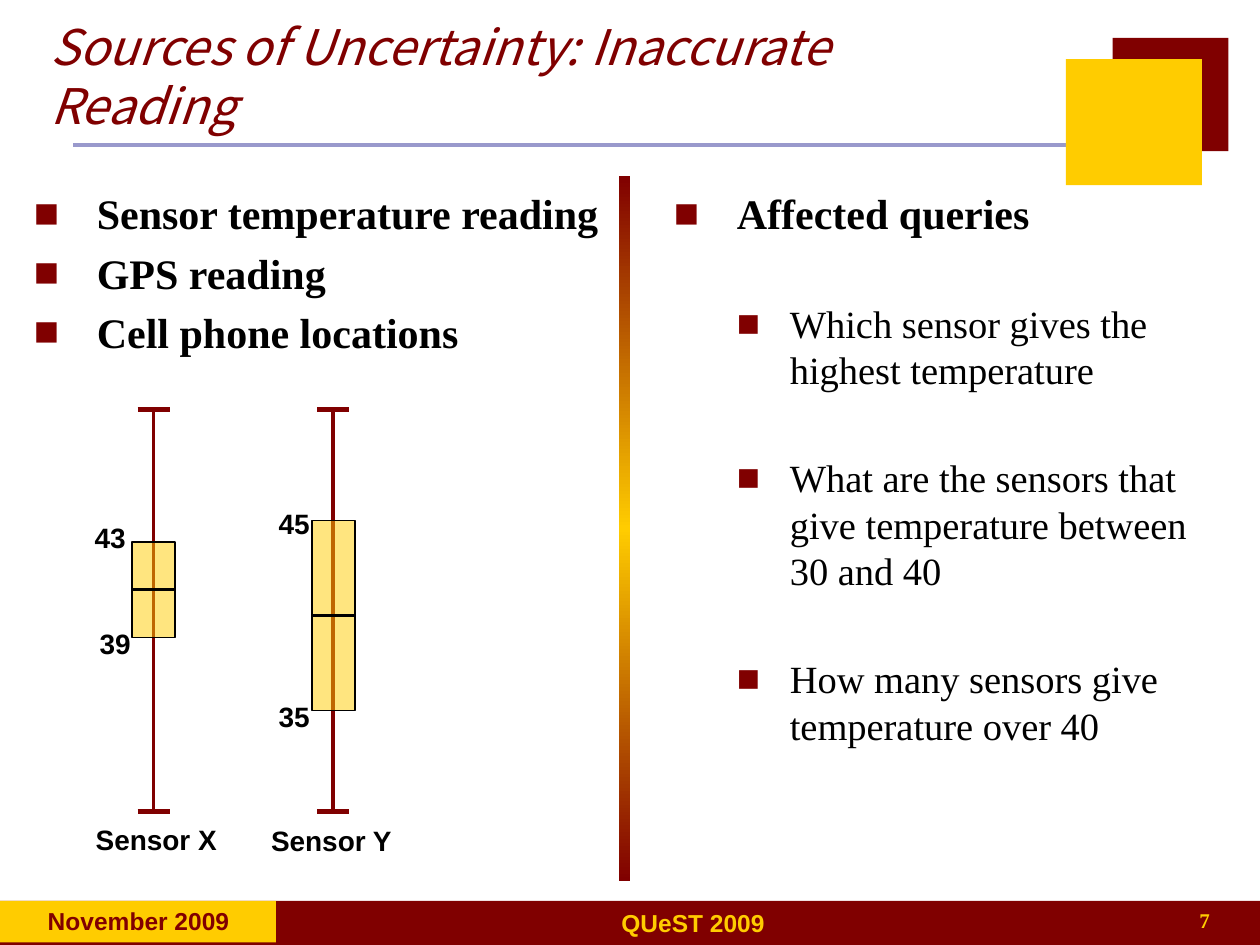
import pptx
import pptx.dml.color
import pptx.enum.shapes
import pptx.enum.text
import pptx.oxml
import pptx.oxml.ns
import pptx.util

MAROON, GOLD, BLACK, LAVENDER = "800000", "FFCC00", "000000", "9999CC"
SANS, SERIF, TITLE_FONT = "Arial", "Times New Roman", "Noto Sans CJK KR"
COLUMNS, ROWS = 100, 75
ALIGN = pptx.enum.text.PP_ALIGN


def color(hex_string):
    return pptx.dml.color.RGBColor.from_string(hex_string)


def add_xml(parent, tag, **attributes):
    element = pptx.oxml.parse_xml(f"<a:{tag} {pptx.oxml.ns.nsdecls('a')}/>")
    for name, value in attributes.items():
        element.set(name, str(value))
    parent.append(element)
    return element


class SlideBuilder:
    """Draws on one slide; lengths are columns and rows of a 100 by 75 grid."""

    def __init__(self, presentation):
        self.column = presentation.slide_width / COLUMNS
        self.row = presentation.slide_height / ROWS
        self.slide = presentation.slides.add_slide(presentation.slide_layouts[6])
        self.shapes = self.slide.shapes

    def place(self, left, top, width, height):
        return (round(left * self.column), round(top * self.row),
                round(width * self.column), round(height * self.row))

    def rectangle(self, left, top, width, height, fill, alpha=None, outline=None):
        shape = self.shapes.add_shape(pptx.enum.shapes.MSO_SHAPE.RECTANGLE,
                                      *self.place(left, top, width, height))
        shape.shadow.inherit = False
        shape.fill.solid()
        shape.fill.fore_color.rgb = color(fill)
        if alpha:
            solid = shape._element.spPr.find(pptx.oxml.ns.qn("a:solidFill"))
            add_xml(solid[0], "alpha", val=alpha * 1000)
        if outline:
            shape.line.color.rgb = color(outline)
            shape.line.width = pptx.util.Pt(1)
        else:
            shape.line.fill.background()
        return shape

    def gradient_bar(self, left, top, width, height, colors):
        shape = self.rectangle(left, top, width, height, colors[0])
        shape.fill.gradient()
        gradient = shape._element.spPr.find(pptx.oxml.ns.qn("a:gradFill"))
        for child in list(gradient):
            gradient.remove(child)
        stops = add_xml(gradient, "gsLst")
        for index, value in enumerate(colors):
            stop = add_xml(stops, "gs", pos=index * 100000 // (len(colors) - 1))
            add_xml(stop, "srgbClr", val=value)
        add_xml(gradient, "lin", ang=90 * 60000, scaled=0)

    def line(self, x1, y1, x2, y2, stroke, points):
        connector = self.shapes.add_connector(pptx.enum.shapes.MSO_CONNECTOR.STRAIGHT,
                                              *self.place(x1, y1, x2, y2))
        connector.line.color.rgb = color(stroke)
        connector.line.width = pptx.util.Pt(points)
        add_xml(connector._element.spPr, "effectLst")
        return connector

    def style(self, paragraph, font, size, text_color, bold=True, italic=False):
        for run in paragraph.runs:
            run.font.name = font
            run.font.size = pptx.util.Pt(size)
            run.font.bold = bold
            run.font.italic = italic
            run.font.color.rgb = color(text_color)

    def text(self, text, left, top, width, height, font=SANS, size=16,
             text_color=BLACK, align=ALIGN.CENTER, **emphasis):
        box = self.shapes.add_textbox(*self.place(left, top, width, height))
        box.text_frame.word_wrap = True
        box.text_frame.text = text
        paragraph = box.text_frame.paragraphs[0]
        paragraph.alignment = align
        self.style(paragraph, font, size, text_color, **emphasis)
        return box

    def bullets(self, items, left, top, width, height):
        """Items are (text, level) pairs."""
        box = self.shapes.add_textbox(*self.place(left, top, width, height))
        frame = box.text_frame
        frame.word_wrap = True
        # per level: text margin, hanging indent, size, line height, space before, bold
        levels = [(5, 5, 24, 29, 4.8, True), (9.2, 4.2, 22, 26.6, 35, False)]
        for index, (text, level) in enumerate(items):
            margin, hanging, size, line_height, space, bold = levels[level]
            paragraph = frame.add_paragraph() if index else frame.paragraphs[0]
            paragraph.text = text
            paragraph.level = level
            paragraph.line_spacing = pptx.util.Pt(line_height)
            paragraph.space_before = pptx.util.Pt(space if index else 0)
            properties = paragraph._p.get_or_add_pPr()
            properties.set("marL", str(round(margin * self.column)))
            properties.set("indent", str(-round(hanging * self.column)))
            add_xml(add_xml(properties, "buClr"), "srgbClr", val=MAROON)
            add_xml(properties, "buFont", typeface=SANS)
            add_xml(properties, "buChar", char="■")
            self.style(paragraph, SERIF, size, BLACK, bold)

    def whisker(self, center):
        top, bottom, half_cap = 32.5, 64.4, 1.27
        self.line(center, top, center, bottom, MAROON, 2)
        for y in (bottom, top):
            self.line(center - half_cap, y, center + half_cap, y, MAROON, 3)

    def box_with_median(self, center, top, height):
        width = 3.4
        box = self.rectangle(center - width / 2, top, width, height, GOLD, 50, BLACK)
        middle = top + height / 2
        median = self.line(center - width / 2, middle, center + width / 2, middle, BLACK, 2)
        median.begin_connect(box, 1)
        median.end_connect(box, 3)


def main():
    presentation = pptx.Presentation()
    presentation.slide_width = pptx.util.Inches(10)
    presentation.slide_height = pptx.util.Inches(7.5)
    builder = SlideBuilder(presentation)

    # Title rule, footer bands and corner squares
    builder.line(5.8, 11.5, 85, 11.5, LAVENDER, 2.25)
    for left, top, width, height, fill in [
            (0, 71.5, 100, 3.5, MAROON), (0, 71.5, 21.9, 3.3, GOLD),
            (88.3, 3, 9.2, 9, MAROON), (84.6, 4.7, 10.8, 10, GOLD)]:
        builder.rectangle(left, top, width, height, fill)

    # Footer texts
    builder.text("QUeST 2009", 18.9, 71.6, 72.2, 3.3, size=14, text_color=GOLD)
    builder.text("November 2009", 1.2, 71.4, 19.6, 3.3, size=14, text_color=MAROON)
    builder.text("7", 76.2, 71.5, 20.8, 3.3, SERIF, 12, GOLD, ALIGN.RIGHT)

    # Title
    title = builder.text("Sources of Uncertainty: Inaccurate Reading", 3, 0.9, 79.4, 10.1,
                         TITLE_FONT, 28, MAROON, ALIGN.LEFT, bold=False, italic=True)
    title.text_frame.vertical_anchor = pptx.enum.text.MSO_ANCHOR.MIDDLE
    title.text_frame.paragraphs[0].line_spacing = pptx.util.Pt(33.7)

    # Sources on the left, queries on the right
    builder.bullets([("Sensor temperature reading", 0), ("GPS reading", 0),
                     ("Cell phone locations", 0)], 1.7, 14.4, 47.5, 14.7)
    builder.bullets([("Affected queries", 0),
                     ("Which sensor gives the highest temperature", 1),
                     ("What are the sensors that give temperature between 30 and 40", 1),
                     ("How many sensors give temperature over 40", 1)],
                    52.5, 14.4, 46.2, 46)
    builder.gradient_bar(49.1, 14, 0.9, 55.9, [MAROON, GOLD, MAROON])

    # Sensor ranges: center, box top and height, then name and bounds with left and top
    sensors = [
        (12.2, 43, 7.6, ("Sensor X", 6.3, 64.8), [("43", 5.4, 40.8), ("39", 5.8, 49.2)]),
        (26.45, 41.3, 15.1, ("Sensor Y", 20.2, 64.9), [("45", 20, 39.7), ("35", 20, 55)])]
    for center, top, height, name, bounds in sensors:
        builder.whisker(center)
        builder.box_with_median(center, top, height)
        builder.text(*name, 12.2, 3.7)
        for bound in bounds:
            builder.text(*bound, 6.7, 3.7)

    presentation.save("out.pptx")


if __name__ == "__main__":
    main()
